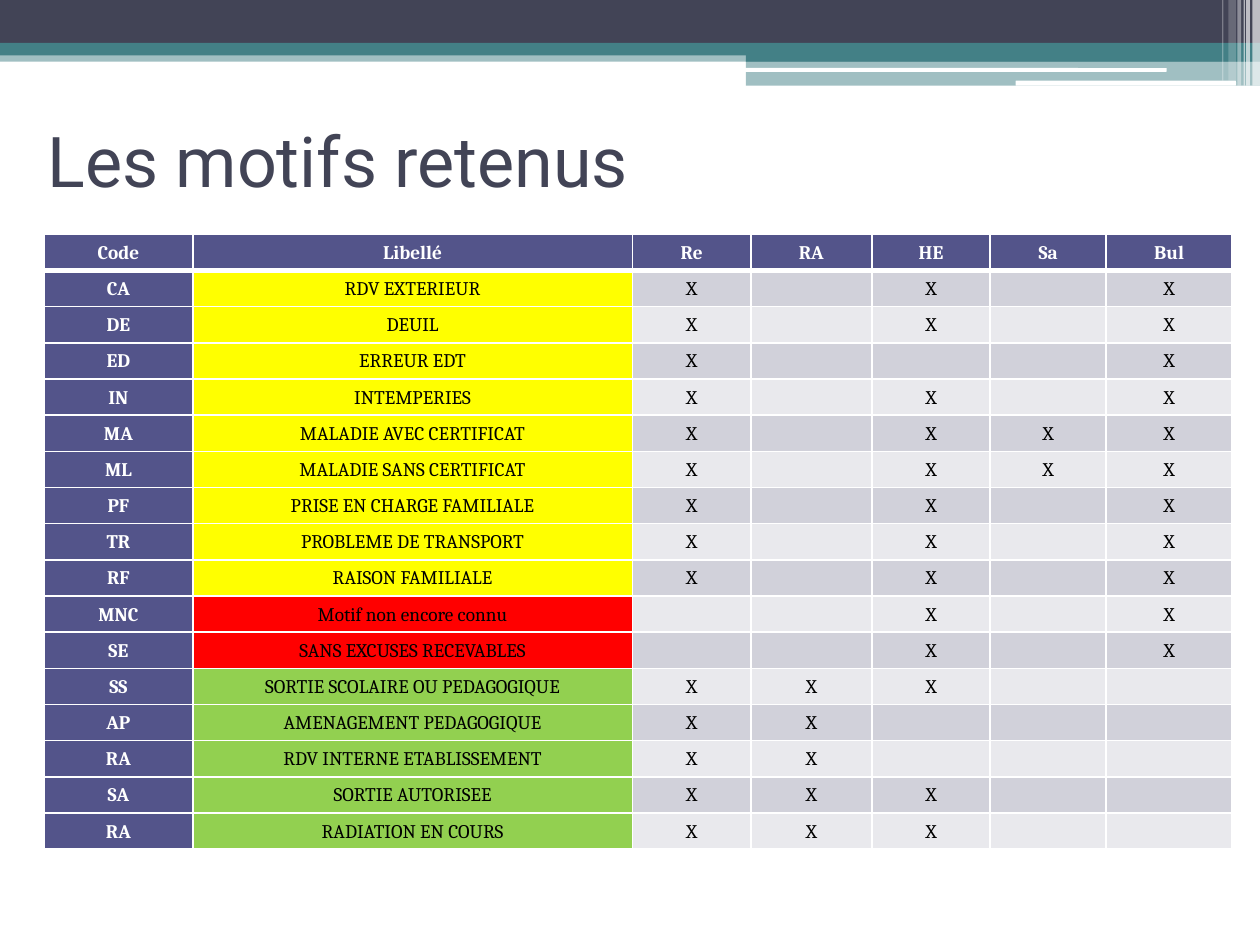
from lxml import etree
from pptx import Presentation
from pptx.dml.color import RGBColor
from pptx.enum.shapes import MSO_SHAPE
from pptx.enum.text import MSO_ANCHOR, PP_ALIGN
from pptx.oxml.ns import qn
from pptx.util import Inches, Pt

RECT, ROUND = MSO_SHAPE.RECTANGLE, MSO_SHAPE.ROUNDED_RECTANGLE
MIDDLE, CENTER = MSO_ANCHOR.MIDDLE, PP_ALIGN.CENTER

WHITE = RGBColor(0xFF, 0xFF, 0xFF)
BLACK = RGBColor(0, 0, 0)
SLATE = RGBColor(0x42, 0x44, 0x56)
TEAL = RGBColor(0x43, 0x80, 0x86)
INDIGO = RGBColor(0x53, 0x54, 0x8A)
YELLOW = RGBColor(0xFF, 0xFF, 0)
RED = RGBColor(0xFF, 0, 0)
GREEN = RGBColor(0x92, 0xD0, 0x50)
BANDS = (RGBColor(0xD1, 0xD1, 0xDA), RGBColor(0xE9, 0xE9, 0xED))

# Shape, left, top, width, height, colour, opacity in percent
BANNER = [
    (RECT, 0, 0.4, 10, 0.09, TEAL, 50),
    (RECT, 0, 0, 10, 0.34, SLATE, 100),
    (RECT, 0, 0.34, 10, 0.1, TEAL, 100),
    (RECT, 5.92, 0.39, 4.08, 0.1, TEAL, 100),
    (RECT, 5.92, 0.48, 4.08, 0.2, TEAL, 50),
    (ROUND, 5.91, 0.54, 3.35, 0.03, WHITE, 100),
    (ROUND, 8.06, 0.64, 1.75, 0.04, WHITE, 100),
]
# Left, width, height, opacity in percent
STRIPES = [
    (9.94, 0.06, 0.68, 65), (9.89, 0.03, 0.68, 65), (9.87, 0.01, 0.68, 60),
    (9.82, 0.03, 0.68, 40), (9.75, 0.06, 0.64, 20), (9.7, 0.01, 0.64, 30),
]

HEADERS = ["Code", "Libellé", "Re", "RA", "HE", "Sa", "Bul"]
COL_WIDTHS = [1.18, 3.49, 0.94, 0.96, 0.94, 0.92, 1]
# Code, label, label colour, headers of the marked columns
REASONS = [
    ("CA", "RDV EXTERIEUR", YELLOW, "Re HE Bul"),
    ("DE", "DEUIL", YELLOW, "Re HE Bul"),
    ("ED", "ERREUR EDT", YELLOW, "Re Bul"),
    ("IN", "INTEMPERIES", YELLOW, "Re HE Bul"),
    ("MA", "MALADIE AVEC CERTIFICAT", YELLOW, "Re HE Sa Bul"),
    ("ML", "MALADIE SANS CERTIFICAT", YELLOW, "Re HE Sa Bul"),
    ("PF", "PRISE EN CHARGE FAMILIALE", YELLOW, "Re HE Bul"),
    ("TR", "PROBLEME DE TRANSPORT", YELLOW, "Re HE Bul"),
    ("RF", "RAISON FAMILIALE", YELLOW, "Re HE Bul"),
    ("MNC", "Motif non encore connu", RED, "HE Bul"),
    ("SE", "SANS EXCUSES RECEVABLES", RED, "HE Bul"),
    ("SS", "SORTIE SCOLAIRE OU PEDAGOGIQUE", GREEN, "Re RA HE"),
    ("AP", "AMENAGEMENT PEDAGOGIQUE", GREEN, "Re RA"),
    ("RA", "RDV INTERNE ETABLISSEMENT", GREEN, "Re RA"),
    ("SA", "SORTIE AUTORISEE", GREEN, "Re RA HE"),
    ("RA", "RADIATION EN COURS", GREEN, "Re RA HE"),
]

CELL_FORMAT = {
    "vertical_anchor": MIDDLE, "margin_left": Inches(0.05),
    "margin_right": Inches(0.05), "margin_top": 0, "margin_bottom": 0,
}


def set_attrs(obj, values):
    for name, value in values.items():
        setattr(obj, name, value)


def add_run(p, text, size, font, color, bold=False):
    r = p.add_run()
    r.text = text
    set_attrs(r.font, {"size": Pt(size), "name": font, "bold": bold})
    r.font.color.rgb = color


def add_bar(slide, kind, left, top, width, height, color, opacity):
    sp = slide.shapes.add_shape(
        kind, Inches(left), Inches(top), Inches(width), Inches(height))
    sp.shadow.inherit = False
    sp.line.fill.background()
    sp.fill.solid()
    sp.fill.fore_color.rgb = color
    if opacity < 100:
        clr = sp.fill._xPr.find(".//" + qn("a:srgbClr"))
        etree.SubElement(clr, qn("a:alpha"), val=str(opacity * 1000))


def add_title(slide, text):
    sp = slide.shapes.add_textbox(
        Inches(0.28), Inches(0.68), Inches(9), Inches(1.17))
    tf = sp.text_frame
    set_attrs(tf, {"word_wrap": True, "vertical_anchor": MIDDLE})
    add_run(tf.paragraphs[0], text, 40, "Roboto", SLATE)


def add_borders(cell, top, bottom):
    tc_pr = cell._tc.get_or_add_tcPr()
    for side, width in (("L", 1), ("R", 1), ("T", top), ("B", bottom)):
        ln = etree.SubElement(tc_pr, qn("a:ln" + side), w=str(Pt(width)))
        fill = etree.SubElement(ln, qn("a:solidFill"))
        etree.SubElement(fill, qn("a:srgbClr"), val=str(WHITE))


def fill_cell(cell, text, fill, color=BLACK, bold=False, top=1, bottom=1):
    set_attrs(cell, CELL_FORMAT)
    add_borders(cell, top, bottom)
    cell.fill.solid()
    cell.fill.fore_color.rgb = fill
    p = cell.text_frame.paragraphs[0]
    set_attrs(p, {"alignment": CENTER, "line_spacing": 1.07})
    if text:
        add_run(p, text, 11, "Cambria", color, bold)
    else:
        # Keeps an empty cell from stretching its row
        etree.SubElement(p._p, qn("a:endParaRPr"), sz="1100")


def add_reason_table(slide):
    table = slide.shapes.add_table(
        len(REASONS) + 1, len(HEADERS), Inches(0.35), Inches(1.86),
        Inches(sum(COL_WIDTHS)), Inches(4.88)).table
    set_attrs(table, {"first_row": False, "horz_banding": False})
    for col, width in zip(table.columns, COL_WIDTHS):
        col.width = Inches(width)

    # Header row
    for c, header in enumerate(HEADERS):
        fill_cell(table.cell(0, c), header, INDIGO, WHITE, True, bottom=3)

    # One row per reason
    for i, (code, label, color, marked) in enumerate(REASONS):
        row, top = i + 1, 1 if i else 3
        fill_cell(table.cell(row, 0), code, INDIGO, WHITE, True, top=top)
        fill_cell(table.cell(row, 1), label, color, top=top)
        for c, header in enumerate(HEADERS[2:], 2):
            mark = "X" if header in marked.split() else ""
            fill_cell(table.cell(row, c), mark, BANDS[i % 2], top=top)


def main():
    prs = Presentation()
    prs.slide_width, prs.slide_height = Inches(10), Inches(7.5)
    slide = prs.slides.add_slide(prs.slide_layouts[6])

    # Banner along the top
    for bar in BANNER:
        add_bar(slide, *bar)
    for left, width, height, opacity in STRIPES:
        add_bar(slide, RECT, left, 0, width, height, WHITE, opacity)

    add_title(slide, "Les motifs retenus")
    add_reason_table(slide)
    prs.save("out.pptx")


if __name__ == "__main__":
    main()
